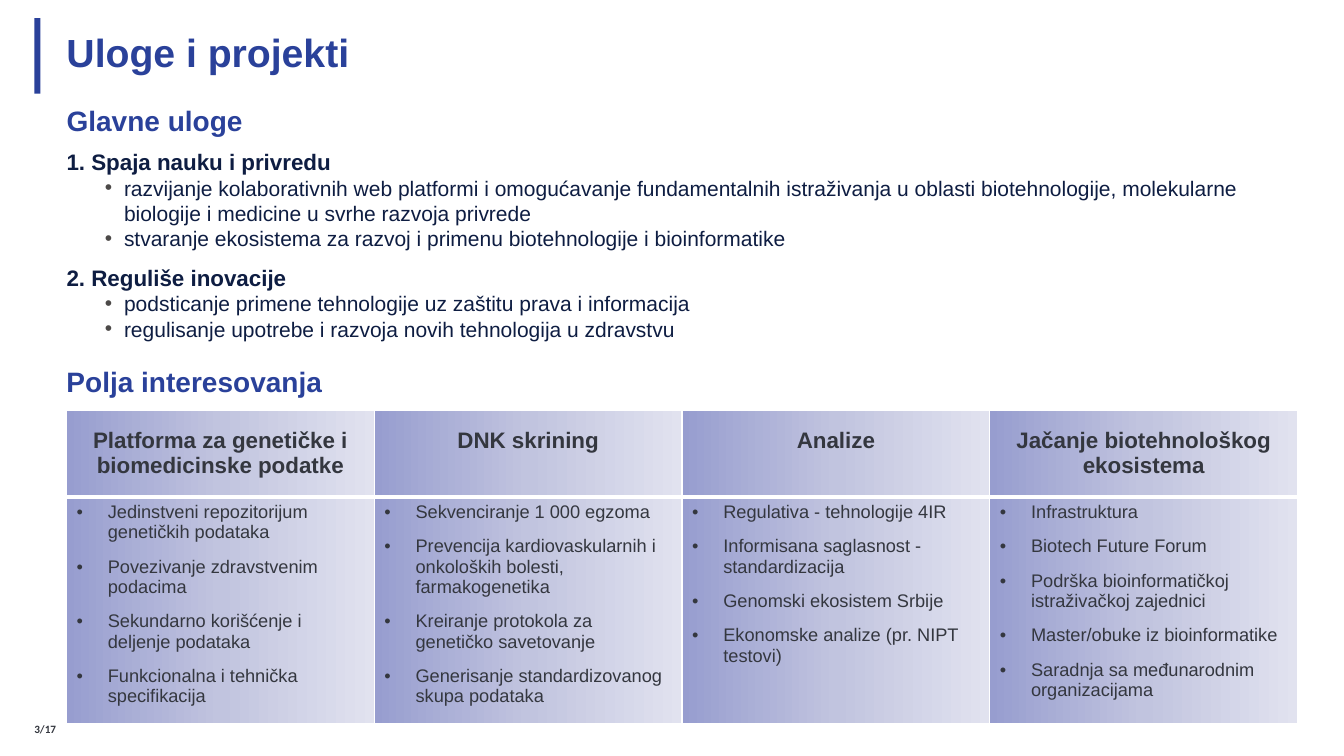
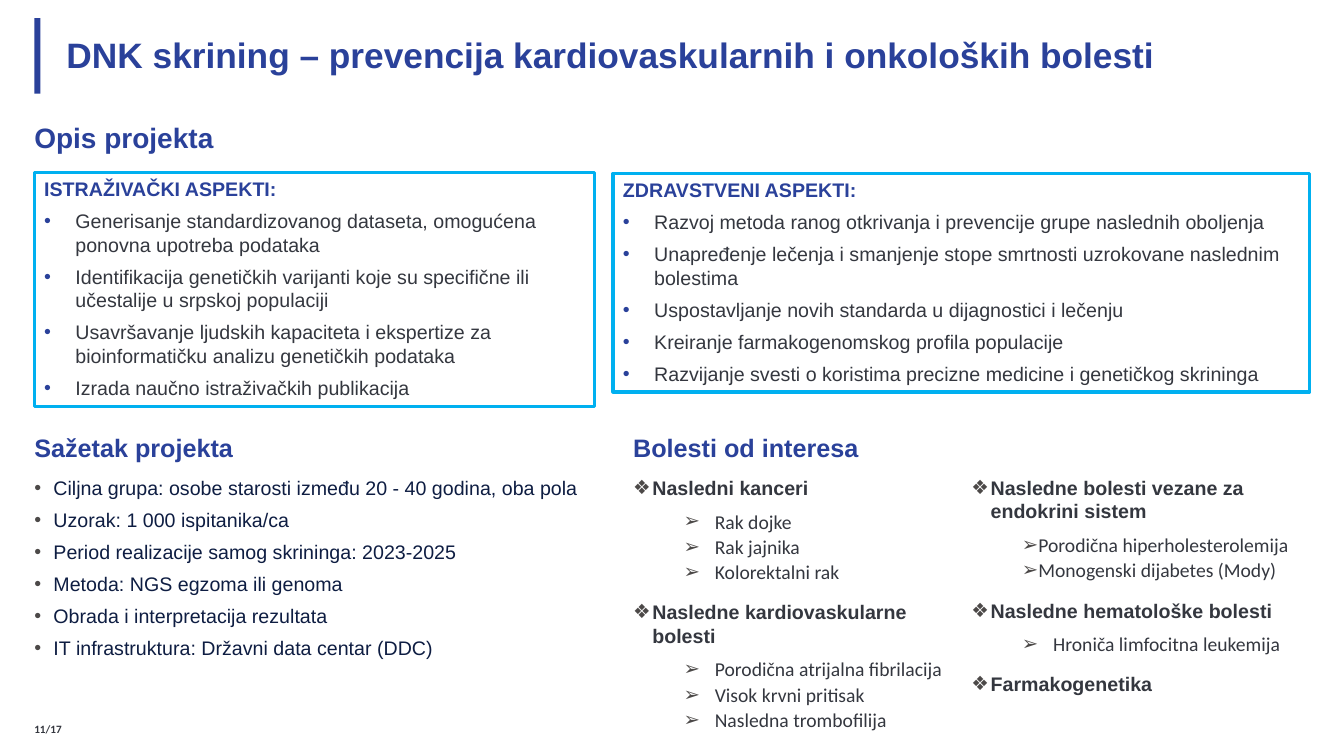
from dataclasses import dataclass
from typing import Any, Optional

from lxml.etree import SubElement
from pptx import Presentation
from pptx.dml.color import RGBColor
from pptx.enum.shapes import MSO_SHAPE as Preset
from pptx.enum.text import MSO_ANCHOR as Anchor, MSO_AUTO_SIZE as AutoSize, PP_ALIGN as Align
from pptx.oxml.ns import qn
from pptx.util import Emu, Pt

EMU_PER_PX = 9144  # 100 px to the inch


def px(length: int) -> Emu:
    return Emu(length * EMU_PER_PX)


@dataclass(frozen=True)
class Theme:
    blue: str = "2A419A"
    navy: str = "0E1D42"
    dark: str = "34373F"
    bullet: str = "4C4948"
    cyan: str = "00B0F0"
    white: str = "FFFFFF"
    gradient: tuple[tuple[int, str], ...] = ((0, "979DCF"), (50, "C1C4DF"), (100, "E1E2EF"))
    font: str = "Arial"
    small_font: str = "Calibri"
    title: float = 28
    long_title: float = 25.2
    heading: float = 20
    subheading: float = 18
    lead: float = 16
    body: float = 15
    detail: float = 14
    cell: float = 13
    footer: float = 8


THEME = Theme()


@dataclass(frozen=True)
class Area:
    left: int
    top: int
    width: int
    height: int

    def emu(self) -> tuple[Emu, ...]:
        return tuple(px(side) for side in (self.left, self.top, self.width, self.height))


@dataclass(frozen=True)
class Line:
    text: str
    style: dict[str, Any]


@dataclass(frozen=True)
class Field:
    name: str
    items: tuple[str, ...]


@dataclass(frozen=True)
class Aspect:
    name: str
    area: Area
    items: tuple[str, ...]


TITLE = dict(size=THEME.title, bold=True, line=Pt(28))
HEADING = dict(size=THEME.heading, bold=True, after=6)
SUBHEADING = HEADING | dict(size=THEME.subheading)
FOOTER = dict(size=THEME.footer, color=THEME.dark, font=THEME.small_font, bold=True)
ROLE = dict(size=THEME.lead, color=THEME.navy, bold=True)
NEXT_ROLE = ROLE | dict(line=1.5)
TASK = dict(size=THEME.body, color=THEME.navy, bullet="•", indent=57, hang=19)
FIELD_NAME = dict(size=THEME.lead, color=THEME.dark, bold=True, align=Align.CENTER)
FIELD_ITEM = dict(size=THEME.cell, color=THEME.dark, bullet="•", bullet_color=THEME.dark,
                  indent=31, hang=31, before=4, after=6)
SUMMARY = dict(size=THEME.detail, color=THEME.navy, bullet="•", indent=19, hang=19, after=6)
ASPECT_NAME = dict(size=THEME.detail, bold=True, after=6)
ASPECT_ITEM = dict(size=THEME.detail, color=THEME.dark, bullet="•", bullet_color=THEME.blue,
                   indent=31, hang=31, after=6)
GROUP = SUMMARY | dict(color=THEME.dark, bold=True, bullet="❖")
DISEASE = dict(size=THEME.detail, color=THEME.dark, font=THEME.small_font, bullet="➢",
               indent=81, hang=31, line=Pt(18))
LAST_DISEASE = DISEASE | dict(after=12)
TIGHT = dict(indent=50, hang=0)

ROLES = [
    Line("1. Spaja nauku i privredu", ROLE),
    Line("razvijanje kolaborativnih web platformi i omogućavanje fundamentalnih istraživanja "
         "u oblasti biotehnologije, molekularne biologije i medicine u svrhe razvoja privrede", TASK),
    Line("stvaranje ekosistema za razvoj i primenu biotehnologije i bioinformatike", TASK),
    Line("2. Reguliše inovacije", NEXT_ROLE),
    Line("podsticanje primene tehnologije uz zaštitu prava i informacija", TASK),
    Line("regulisanje upotrebe i razvoja novih tehnologija u zdravstvu", TASK),
]
FIELDS = [
    Field("Platforma za genetičke i biomedicinske podatke", (
        "Jedinstveni repozitorijum genetičkih podataka",
        "Povezivanje zdravstvenim podacima",
        "Sekundarno korišćenje i deljenje podataka",
        "Funkcionalna i tehnička specifikacija")),
    Field("DNK skrining", (
        "Sekvenciranje 1 000 egzoma",
        "Prevencija kardiovaskularnih i onkoloških bolesti, farmakogenetika",
        "Kreiranje protokola za genetičko savetovanje",
        "Generisanje standardizovanog skupa podataka")),
    Field("Analize", (
        "Regulativa - tehnologije 4IR",
        "Informisana saglasnost - standardizacija",
        "Genomski ekosistem Srbije",
        "Ekonomske analize (pr. NIPT testovi)")),
    Field("Jačanje biotehnološkog ekosistema", (
        "Infrastruktura",
        "Biotech Future Forum",
        "Podrška bioinformatičkoj istraživačkoj zajednici",
        "Master/obuke iz bioinformatike",
        "Saradnja sa međunarodnim organizacijama")),
]
ASPECTS = [
    Aspect("ISTRAŽIVAČKI ASPEKTI:", Area(34, 171, 556, 232), (
        "Generisanje standardizovanog dataseta, omogućena ponovna upotreba podataka",
        "Identifikacija genetičkih varijanti koje su specifične ili učestalije u srpskoj populaciji",
        "Usavršavanje ljudskih kapaciteta i ekspertize za bioinformatičku analizu genetičkih podataka",
        "Izrada naučno istraživačkih publikacija")),
    Aspect("ZDRAVSTVENI ASPEKTI:", Area(608, 172, 691, 217), (
        "Razvoj metoda ranog otkrivanja i prevencije grupe naslednih oboljenja",
        "Unapređenje lečenja i smanjenje stope smrtnosti uzrokovane naslednim bolestima",
        "Uspostavljanje novih standarda u dijagnostici i lečenju",
        "Kreiranje farmakogenomskog profila populacije",
        "Razvijanje svesti o koristima precizne medicine i genetičkog skrininga")),
]
PROJECT_SUMMARY = [Line(text, SUMMARY) for text in (
    "Ciljna grupa: osobe starosti između 20 - 40 godina, oba pola",
    "Uzorak: 1 000 ispitanika/ca",
    "Period realizacije samog skrininga: 2023-2025",
    "Metoda: NGS egzoma ili genoma",
    "Obrada i interpretacija rezultata",
    "IT infrastruktura: Državni data centar (DDC)")]
DISEASES = [
    Line("Nasledni kanceri", GROUP),
    Line("Rak dojke", DISEASE),
    Line("Rak jajnika", DISEASE),
    Line("Kolorektalni rak", LAST_DISEASE),
    Line("Nasledne kardiovaskularne bolesti", GROUP),
    Line("Porodična atrijalna fibrilacija", DISEASE),
    Line("Visok krvni pritisak", DISEASE),
    Line("Nasledna trombofilija", LAST_DISEASE),
    Line("Nasledne bolesti vezane za endokrini sistem", GROUP),
    Line("Porodična hiperholesterolemija", DISEASE | TIGHT),
    Line("Monogenski dijabetes (Mody)", LAST_DISEASE | TIGHT),
    Line("Nasledne hematološke bolesti", GROUP),
    Line("Hroniča limfocitna leukemija", LAST_DISEASE),
    Line("Farmakogenetika", GROUP),
]


def add_color(parent: Any, color: str) -> None:
    SubElement(parent, qn("a:srgbClr")).set("val", color)


def write(para: Any, text: str, *, size: float, color: str = THEME.blue, font: str = THEME.font,
          bold: bool = False, align: Align = Align.LEFT, line: Any = None, before: float = 0,
          after: float = 0, bullet: Optional[str] = None, bullet_color: str = THEME.bullet,
          indent: int = 0, hang: int = 0) -> None:
    """Put formatted text in a paragraph; indent and hang are in px."""
    para.alignment = align
    para.space_before, para.space_after = Pt(before), Pt(after)
    if line is not None:
        para.line_spacing = line
    if bullet:
        props = para._p.get_or_add_pPr()
        props.set("marL", str(px(indent)))
        props.set("indent", str(px(-hang)))
        add_color(SubElement(props, qn("a:buClr")), bullet_color)
        SubElement(props, qn("a:buFont")).set("typeface", THEME.font)
        SubElement(props, qn("a:buChar")).set("char", bullet)
    span = para.add_run()
    span.text = text
    span.font.name, span.font.size, span.font.bold = font, Pt(size), bold
    span.font.color.rgb = RGBColor.from_string(color)


def write_lines(frame: Any, lines: list[Line]) -> None:
    for index, entry in enumerate(lines):
        para = frame.add_paragraph() if index else frame.paragraphs[0]
        write(para, entry.text, **(entry.style if index else entry.style | dict(before=0)))


def add_text(page: Any, area: Area, lines: list[Line], *, anchor: Anchor = Anchor.TOP,
             pad: int = 0, columns: int = 1) -> None:
    """Add a text box with no side insets; pad is the top and bottom inset."""
    frame = page.shapes.add_textbox(*area.emu()).text_frame
    frame.word_wrap, frame.vertical_anchor = True, anchor
    frame.margin_left = frame.margin_right = 0
    frame.margin_top = frame.margin_bottom = px(pad)
    if columns > 1:
        frame._bodyPr.set("numCol", str(columns))
    write_lines(frame, lines)


def add_page(deck: Any, title: str, number: str, title_size: float = THEME.title) -> Any:
    """Add a slide with the side bar, title and page number."""
    page = deck.slides.add_slide(deck.slide_layouts[6])
    bar = page.shapes.add_shape(Preset.RECTANGLE, *Area(34, 18, 6, 75).emu())
    bar.shadow.inherit = False
    bar.fill.solid()
    bar.fill.fore_color.rgb = RGBColor.from_string(THEME.blue)
    bar.line.fill.background()
    add_text(page, Area(66, 18, 1087, 75), [Line(title, TITLE | dict(size=title_size))],
             anchor=Anchor.MIDDLE)
    add_text(page, Area(34, 713, 32, 21), [Line(number, FOOTER)], anchor=Anchor.MIDDLE, pad=5)
    return page


def style_cell(cell: Any, bottom: float) -> None:
    """Give a cell white borders and the left-to-right gradient."""
    props = cell._tc.get_or_add_tcPr()
    for side, width in dict(lnL=1, lnR=1, lnT=1, lnB=bottom).items():
        border = SubElement(props, qn(f"a:{side}"), w=str(Pt(width)))
        add_color(SubElement(border, qn("a:solidFill")), THEME.white)
    fill = SubElement(props, qn("a:gradFill"), rotWithShape="1")
    stops = SubElement(fill, qn("a:gsLst"))
    for position, color in THEME.gradient:
        add_color(SubElement(stops, qn("a:gs"), pos=str(position * 1000)), color)
    SubElement(fill, qn("a:lin"), ang="0", scaled="0")


def add_fields_table(page: Any, area: Area, fields: list[Field], heights: tuple[int, int]) -> None:
    table = page.shapes.add_table(2, len(fields), *area.emu()).table
    table.first_row = table.horz_banding = False
    for row, height in zip(table.rows, heights):
        row.height = px(height)
    for index, field in enumerate(fields):
        head, body = table.cell(0, index), table.cell(1, index)
        head.margin_top = px(18)
        write_lines(head.text_frame, [Line(field.name, FIELD_NAME)])
        write_lines(body.text_frame, [Line(item, FIELD_ITEM) for item in field.items])
        style_cell(head, bottom=3)
        style_cell(body, bottom=1)


def add_aspect(page: Any, aspect: Aspect) -> None:
    box = page.shapes.add_shape(Preset.RECTANGLE, *aspect.area.emu())
    box.shadow.inherit = False
    box.fill.background()
    box.line.color.rgb = RGBColor.from_string(THEME.cyan)
    box.line.width = Pt(2.25)
    frame = box.text_frame
    frame.word_wrap, frame.vertical_anchor = True, Anchor.TOP
    frame.auto_size = AutoSize.SHAPE_TO_FIT_TEXT
    write_lines(frame, [Line(aspect.name, ASPECT_NAME)]
                + [Line(item, ASPECT_ITEM) for item in aspect.items])


def add_roles_page(deck: Any) -> None:
    page = add_page(deck, "Uloge i projekti", "3/17")
    add_text(page, Area(66, 103, 1221, 30), [Line("Glavne uloge", HEADING)])
    add_text(page, Area(66, 147, 1221, 226), ROLES)
    add_text(page, Area(66, 362, 624, 30), [Line("Polja interesovanja", HEADING)])
    add_fields_table(page, Area(66, 407, 1221, 291), FIELDS, (86, 205))


def add_screening_page(deck: Any) -> None:
    page = add_page(deck, "DNK skrining – prevencija kardiovaskularnih i onkoloških bolesti",
                    "11/17", THEME.long_title)
    add_text(page, Area(34, 120, 1265, 30), [Line("Opis projekta", HEADING)])
    for aspect in ASPECTS:
        add_aspect(page, aspect)
    add_text(page, Area(34, 429, 624, 30), [Line("Sažetak projekta", SUBHEADING)])
    add_text(page, Area(34, 472, 669, 255), PROJECT_SUMMARY)
    add_text(page, Area(628, 429, 624, 30), [Line("Bolesti od interesa", SUBHEADING)])
    add_text(page, Area(628, 472, 671, 255), DISEASES, columns=2)


def main() -> None:
    deck = Presentation()
    deck.slide_width, deck.slide_height = px(1333), px(750)
    add_roles_page(deck)
    add_screening_page(deck)
    deck.save("out.pptx")


if __name__ == "__main__":
    main()
